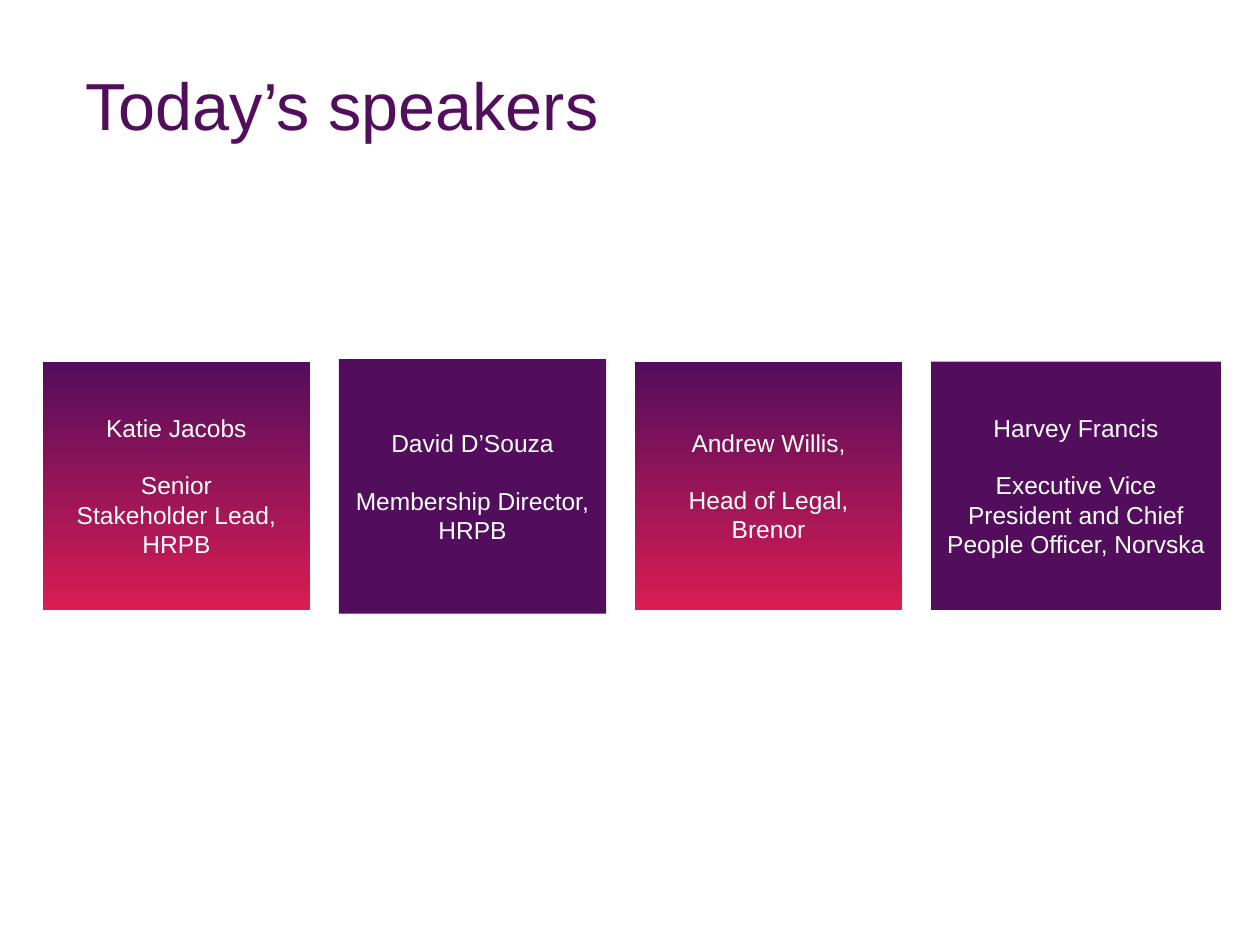
import pptx
import pptx.dml.color
import pptx.enum.shapes
import pptx.enum.text
import pptx.util
from pptx.util import Inches

PURPLE, CRIMSON, WHITE = "520D5D", "DA1D52", "FFFFFF"
FONT = "Arial"
CARD_PITCH = 2.35
SPEAKERS = [
    ("Katie Jacobs", "Senior\vStakeholder Lead,\vHRPB", True, 2.87, 2.12, 1.97),
    ("David D’Souza", "Membership Director,\vHRPB", False, 2.85, 2.12, 2.02),
    ("Andrew Willis,", "Head of Legal,\vBrenor", True, 2.87, 2.12, 1.97),
    ("Harvey Francis", "Executive Vice President and Chief People Officer, Norvska",
     False, 2.87, 2.3, 1.97),
]


def color(hex_string):
    """Return the RGB colour for a hex string."""
    return pptx.dml.color.RGBColor.from_string(hex_string)


def format_font(paragraph, size, hex_string):
    """Set the font, size and colour of a paragraph's runs."""
    for run in paragraph.runs:
        run.font.name = FONT
        run.font.size = pptx.util.Pt(size)
        run.font.color.rgb = color(hex_string)


def add_title(slide, text, left, top, width, height):
    """Move, fill and format the title placeholder."""
    title = slide.shapes.title
    title.left, title.top, title.width, title.height = left, top, width, height
    frame = title.text_frame
    frame.text = text
    frame.word_wrap = True
    frame.auto_size = pptx.enum.text.MSO_AUTO_SIZE.NONE
    frame.vertical_anchor = pptx.enum.text.MSO_ANCHOR.TOP
    paragraph = frame.paragraphs[0]
    paragraph.alignment = pptx.enum.text.PP_ALIGN.LEFT
    paragraph.line_spacing = 0.9
    format_font(paragraph, 38, PURPLE)


def fill_card(shape, has_gradient):
    """Fill a card with plain purple or a downward gradient."""
    if not has_gradient:
        shape.fill.solid()
        shape.fill.fore_color.rgb = color(PURPLE)
        return
    shape.fill.gradient()
    shape.fill.gradient_angle = 270
    for stop, position, hex_string in zip(
            shape.fill.gradient_stops, (0, 1), (PURPLE, CRIMSON)):
        stop.position = position
        stop.color.rgb = color(hex_string)


def add_speaker_card(slide, name, role, has_gradient, left, top, width, height):
    """Add a card with a speaker's name above the role."""
    shape = slide.shapes.add_shape(
        pptx.enum.shapes.MSO_SHAPE.RECTANGLE, left, top, width, height)
    shape.shadow.inherit = False
    shape.line.fill.background()
    fill_card(shape, has_gradient)
    frame = shape.text_frame
    frame.word_wrap = True
    frame.vertical_anchor = pptx.enum.text.MSO_ANCHOR.MIDDLE
    frame.text = f"{name}\n{role}"
    for paragraph in frame.paragraphs:
        paragraph.alignment = pptx.enum.text.PP_ALIGN.CENTER
        format_font(paragraph, 14, WHITE)
    frame.paragraphs[1].space_before = pptx.util.Pt(16)


def main():
    """Build and save the speakers slide."""
    presentation = pptx.Presentation()
    presentation.slide_width = Inches(10)
    presentation.slide_height = Inches(7.5)
    slide = presentation.slides.add_slide(presentation.slide_layouts[5])
    add_title(slide, "Today’s speakers",
              Inches(0.58), Inches(0.53), Inches(8.62), Inches(1.35))
    for index, (name, role, has_gradient, top, width, height) in enumerate(SPEAKERS):
        add_speaker_card(slide, name, role, has_gradient,
                         Inches(0.34 + index * CARD_PITCH), Inches(top),
                         Inches(width), Inches(height))
    presentation.save("out.pptx")


if __name__ == "__main__":
    main()
